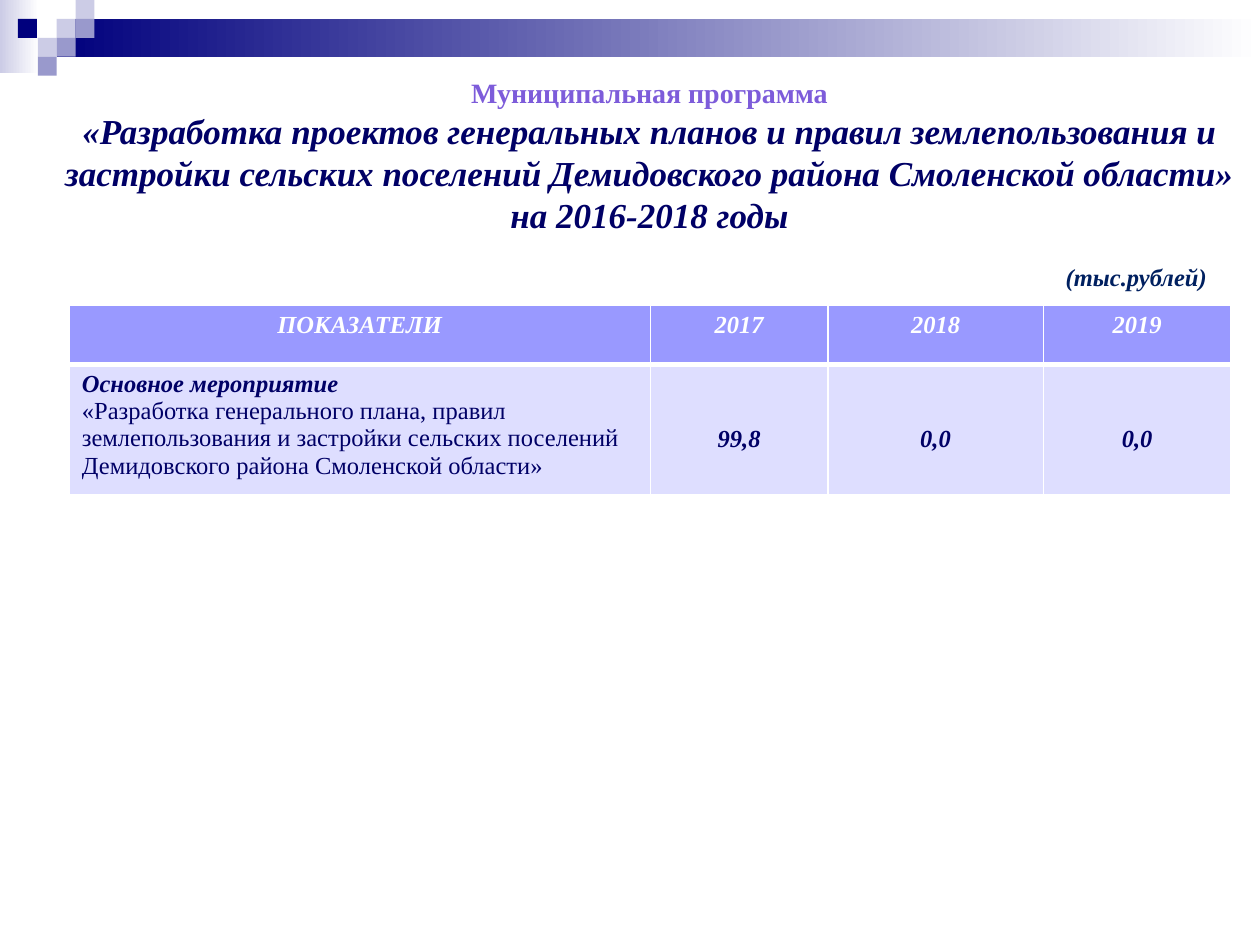
from dataclasses import dataclass
from typing import Optional

from lxml.etree import SubElement
from pptx import Presentation
from pptx.dml.color import RGBColor
from pptx.enum.shapes import MSO_SHAPE as Preset
from pptx.enum.text import MSO_AUTO_SIZE as AutoSize, PP_ALIGN as Align
from pptx.oxml.ns import qn
from pptx.util import Pt


@dataclass(frozen=True)
class Theme:
    font: str = "Times New Roman"
    navy: str = "00007D"
    pale: str = "CCCCE6"
    mid: str = "9999CC"
    white: str = "FFFFFF"
    violet: str = "7D5CDA"
    ink: str = "000066"
    unit_ink: str = "002060"
    header_fill: str = "9999FF"
    body_fill: str = "DEDEFF"
    program_size: int = 16
    title_size: int = 20
    table_size: int = 14


THEME = Theme()


@dataclass(frozen=True)
class Box:
    left: float
    top: float
    width: float
    height: float

    def lengths(self) -> tuple:
        return tuple(Pt(v) for v in (self.left, self.top, self.width, self.height))


@dataclass(frozen=True)
class Block:
    box: Box
    color: str
    fade_to: Optional[str] = None


@dataclass(frozen=True)
class Line:
    text: str
    size: int
    color: str
    bold: bool = True
    italic: bool = True
    align: Align = Align.CENTER


def draw_block(slide, block: Block) -> None:
    shape = slide.shapes.add_shape(Preset.RECTANGLE, *block.box.lengths())
    shape.shadow.inherit = False
    shape.line.fill.background()
    if block.fade_to is None:
        shape.fill.solid()
        shape.fill.fore_color.rgb = RGBColor.from_string(block.color)
        return
    shape.fill.gradient()
    shape.fill.gradient_angle = 0
    for stop, color in zip(shape.fill.gradient_stops, (block.color, block.fade_to)):
        stop.color.rgb = RGBColor.from_string(color)


def write_lines(frame, lines: list[Line]) -> None:
    for index, line in enumerate(lines):
        paragraph = frame.add_paragraph() if index else frame.paragraphs[0]
        paragraph.alignment = line.align
        run = paragraph.add_run()
        run.text = line.text
        formats = {"name": THEME.font, "size": Pt(line.size),
                   "bold": line.bold, "italic": line.italic}
        for attribute, value in formats.items():
            setattr(run.font, attribute, value)
        run.font.color.rgb = RGBColor.from_string(line.color)


def draw_text(slide, box: Box, lines: list[Line], wrap: bool) -> None:
    frame = slide.shapes.add_textbox(*box.lengths()).text_frame
    frame.word_wrap = wrap
    frame.auto_size = AutoSize.SHAPE_TO_FIT_TEXT
    write_lines(frame, lines)


def set_borders(cell, widths: dict[str, float]) -> None:
    properties = cell._tc.get_or_add_tcPr()
    for index, (side, width) in enumerate(widths.items()):
        border = SubElement(properties, qn(f"a:ln{side}"), w=str(Pt(width)))
        fill = SubElement(border, qn("a:solidFill"))
        SubElement(fill, qn("a:srgbClr"), val=THEME.white)
        properties.insert(index, border)  # borders precede the cell fill


def draw_cell(cell, lines: list[Line], fill: str, borders: dict[str, float]) -> None:
    write_lines(cell.text_frame, lines)
    cell.fill.solid()
    cell.fill.fore_color.rgb = RGBColor.from_string(fill)
    set_borders(cell, borders)


# Corner decoration: faded bands and squares on a common grid
SQUARE = 10.8
BANDS = [
    Block(Box(0, 0, 22.3, 41.8), THEME.pale, THEME.white),
    Block(Box(32.4, SQUARE, 687.6, 2 * SQUARE), THEME.navy, THEME.white),
]
SQUARES = [  # column, row, colour
    (3, 1, THEME.pale), (4, 0, THEME.pale), (4, 1, THEME.mid),
    (2, 2, THEME.pale), (0.95, 1, THEME.navy), (3, 2, THEME.mid),
    (2, 3, THEME.mid),
]

# Headings
HEADING = [
    Line("Муниципальная программа", THEME.program_size, THEME.violet, italic=False),
    Line("«Разработка проектов генеральных планов и правил землепользования и "
         "застройки сельских поселений Демидовского района Смоленской области» "
         "на 2016-2018 годы", THEME.title_size, THEME.ink),
]
UNIT = [Line("(тыс.рублей)", THEME.table_size, THEME.unit_ink, align=Align.LEFT)]

# Table content
COLUMN_WIDTHS = [332, 101.5, 123.1, 107.3]
ROW_HEIGHTS = [34, 74]
HEADERS = ["ПОКАЗАТЕЛИ", "2017", "2018", "2019"]
MEASURE = [
    Line("Основное мероприятие", THEME.table_size, THEME.ink, align=Align.LEFT),
    Line("«Разработка генерального плана, правил землепользования и застройки "
         "сельских поселений Демидовского района Смоленской области»",
         THEME.table_size, THEME.ink, bold=False, italic=False, align=Align.LEFT),
]
AMOUNTS = ["99,8", "0,0", "0,0"]
AMOUNT_TOP = 34.6  # lowers the amounts to the third text line
HEADER_BORDERS = {"L": 1, "R": 1, "T": 1, "B": 3}
BODY_BORDERS = {"L": 1, "R": 1, "T": 3, "B": 1}


def draw_budget(slide) -> None:
    box = Box(39.6, 174.4, sum(COLUMN_WIDTHS), sum(ROW_HEIGHTS))
    budget = slide.shapes.add_table(2, len(HEADERS), *box.lengths()).table
    budget.horz_banding = False
    for column, width in zip(budget.columns, COLUMN_WIDTHS):
        column.width = Pt(width)
    for row, height in zip(budget.rows, ROW_HEIGHTS):
        row.height = Pt(height)
    for column, header in enumerate(HEADERS):
        draw_cell(budget.cell(0, column), [Line(header, THEME.table_size, THEME.white)],
                  THEME.header_fill, HEADER_BORDERS)
    draw_cell(budget.cell(1, 0), MEASURE, THEME.body_fill, BODY_BORDERS)
    for column, amount in enumerate(AMOUNTS, start=1):
        cell = budget.cell(1, column)
        cell.margin_top = Pt(AMOUNT_TOP)
        draw_cell(cell, [Line(amount, THEME.table_size, THEME.ink)],
                  THEME.body_fill, BODY_BORDERS)


def main() -> None:
    deck = Presentation()
    deck.slide_width, deck.slide_height = Pt(720), Pt(540)
    slide = deck.slides.add_slide(deck.slide_layouts[6])

    squares = [Block(Box(column * SQUARE, row * SQUARE, SQUARE, SQUARE), color)
               for column, row, color in SQUARES]
    for block in BANDS + squares:
        draw_block(slide, block)

    draw_text(slide, Box(22.3, 39.6, 697.7, 99.4), HEADING, wrap=True)
    draw_budget(slide)
    draw_text(slide, Box(601.9, 146.2, 95.8, 24.5), UNIT, wrap=False)
    deck.save("out.pptx")


if __name__ == "__main__":
    main()
